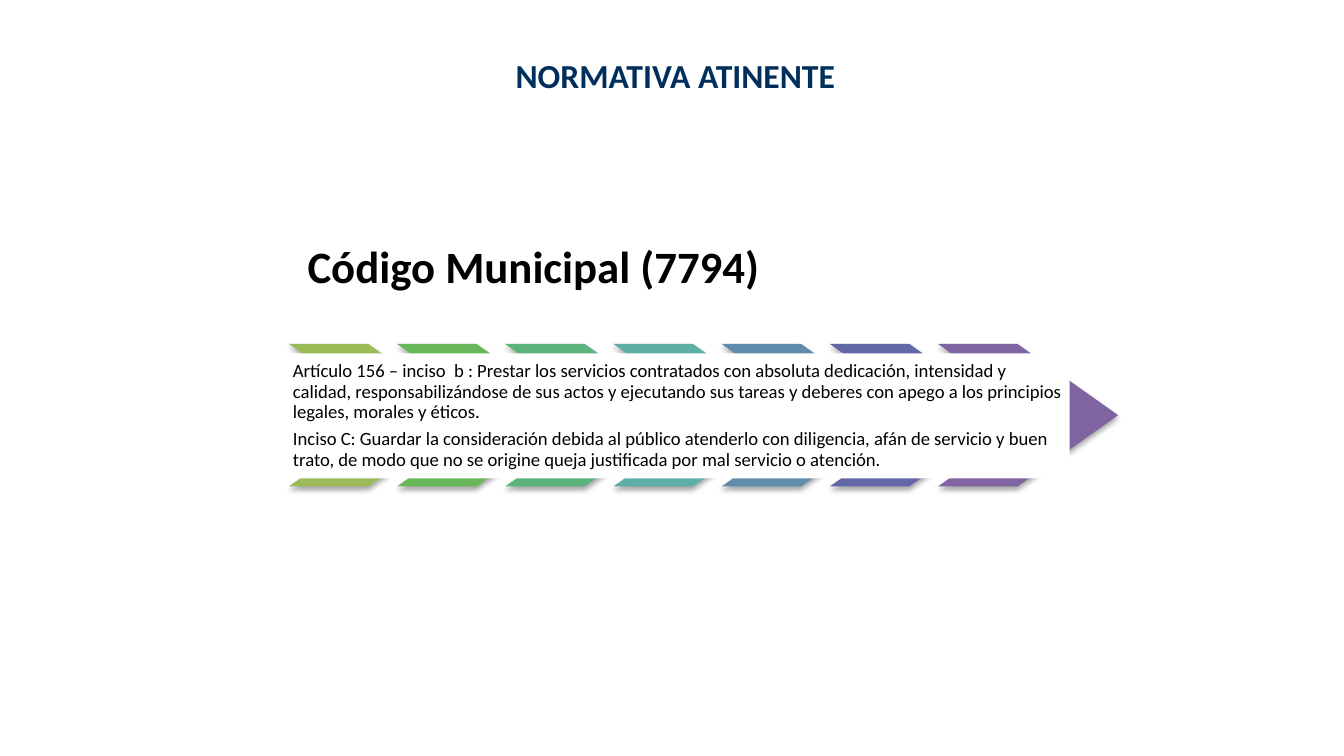
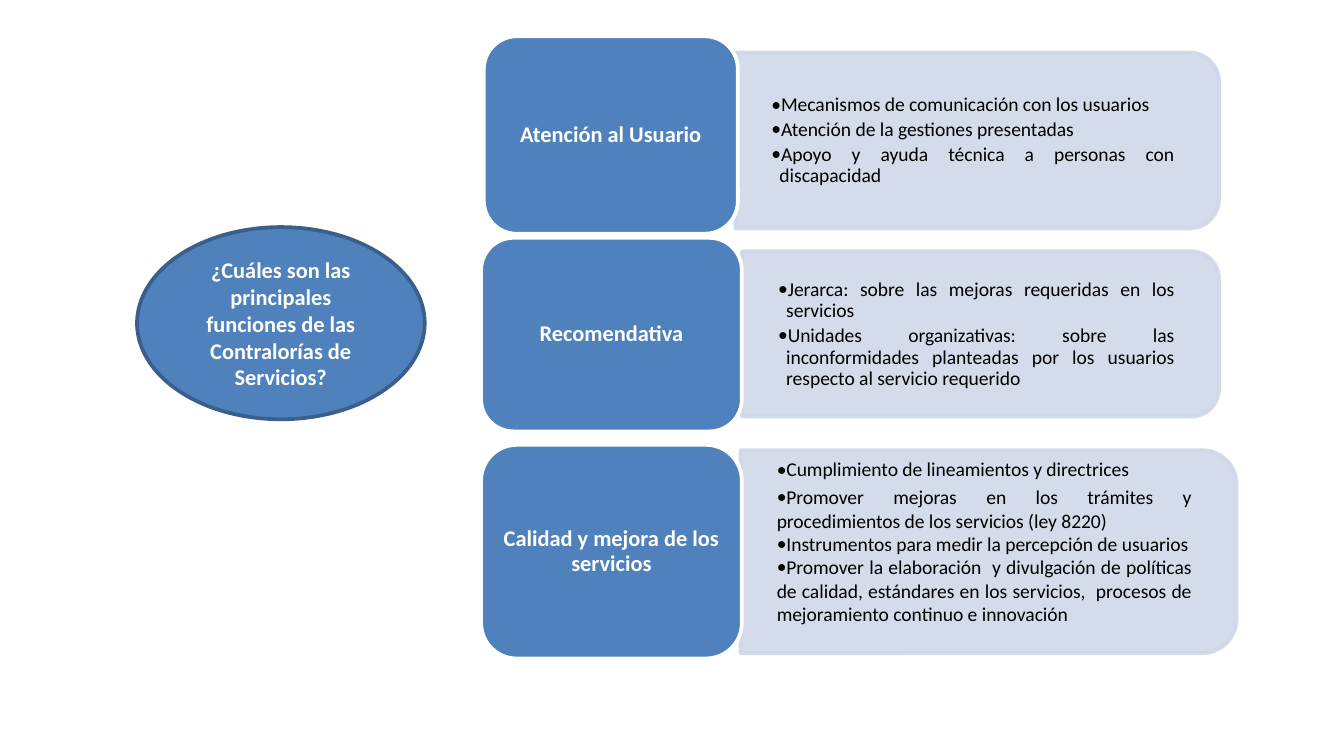
from dataclasses import dataclass

from lxml import etree
from pptx import Presentation
from pptx.dml.color import RGBColor
from pptx.enum.shapes import MSO_SHAPE
from pptx.enum.text import MSO_ANCHOR, PP_ALIGN
from pptx.oxml.ns import qn
from pptx.util import Inches, Pt

CHEVRON, RECT, OVAL = MSO_SHAPE.CHEVRON, MSO_SHAPE.RECTANGLE, MSO_SHAPE.OVAL
ROUNDED, ROUND_TOP = MSO_SHAPE.ROUNDED_RECTANGLE, MSO_SHAPE.ROUND_2_SAME_RECTANGLE
MIDDLE, BOTTOM = MSO_ANCHOR.MIDDLE, MSO_ANCHOR.BOTTOM
LEFT, CENTER, JUSTIFY = PP_ALIGN.LEFT, PP_ALIGN.CENTER, PP_ALIGN.JUSTIFY


@dataclass(frozen=True)
class Theme:
    font: str = "Calibri"
    navy: str = "002F5C"
    blue: str = "4F81BD"
    blue_edge: str = "3A5F8C"
    pale: str = "D0D8E8"
    white: str = "FFFFFF"
    black: str = "000000"
    chevrons: tuple = ("9BBB59", "69B75B", "5CB37C", "5EAFA6",
                       "608CAB", "6267A6", "8064A2")
    title: float = 18
    heading: float = 24
    label: float = 12
    bullet: float = 10.5
    body: float = 10


T = Theme()


def rgb(value):
    return RGBColor.from_string(value)


def set_alpha(element, percent):
    """Add transparency to the solid colour found under an XML element."""
    color = next(element.iter(qn("a:srgbClr")))
    etree.SubElement(color, qn("a:alpha"), val=str(percent * 1000))


def add_box(s, kind, box, fill, line=None):
    sp = s.shapes.add_shape(kind, *map(Inches, box))
    sp.shadow.inherit = False
    sp.fill.solid()
    sp.fill.fore_color.rgb = rgb(fill)
    if line:
        sp.line.color.rgb = rgb(line)
        sp.line.width = Pt(2)
    else:
        sp.line.fill.background()
    return sp


def add_textbox(s, box):
    return s.shapes.add_textbox(*map(Inches, box))


def frame(sp, anchor=MIDDLE, inset_x=0.1, inset_y=0.05):
    tf = sp.text_frame
    tf.word_wrap = True
    tf.vertical_anchor = anchor
    tf.margin_left = tf.margin_right = Inches(inset_x)
    tf.margin_top = tf.margin_bottom = Inches(inset_y)
    return tf


def write(tf, texts, size, color, align=LEFT, bold=False, spacing=0.9, after=0):
    for i, text in enumerate(texts):
        p = tf.paragraphs[0] if i == 0 else tf.add_paragraph()
        p.alignment = align
        p.line_spacing = spacing
        p.space_after = Pt(after)
        r = p.add_run()
        r.text = text
        r.font.name = T.font
        r.font.size = Pt(size)
        r.font.bold = bold
        r.font.color.rgb = rgb(color)


def add_bullet(p, hang):
    p.level = 1
    pPr = p._p.get_or_add_pPr()
    pPr.set("marL", str(Inches(hang)))
    pPr.set("indent", str(-Inches(hang)))
    etree.SubElement(pPr, qn("a:buFont"), typeface=T.font)
    etree.SubElement(pPr, qn("a:buChar"), char="•")


def add_soft_shadow(sp):
    effects = sp._element.spPr.find(qn("a:effectLst"))
    shadow = etree.SubElement(effects, qn("a:outerShdw"), blurRad=str(Pt(3.1)),
                              dist=str(Pt(1.8)), dir="5400000", rotWithShape="0")
    etree.SubElement(shadow, qn("a:srgbClr"), val=T.black)
    set_alpha(shadow, 35)


def add_title(s, box, text):
    write(frame(add_textbox(s, box)), [text], T.title, T.navy, CENTER, True, 1)


def add_law_block(s, box, heading, articles):
    """Heading above a row of chevrons, partly covered by the text of the law."""
    x, y, w, h = box
    heading_box = add_textbox(s, (x + 0.04, y, w - 0.07, 0.52))
    write(frame(heading_box, BOTTOM, 0.1, 0.1), [heading], T.heading, T.black, bold=True)
    chevron_h, pitch = 1.06, 0.805
    row_y = y + h - chevron_h
    for i, color in enumerate(T.chevrons):
        sp = add_box(s, CHEVRON, (x + i * pitch, row_y, 1.34, chevron_h), color)
        sp.adjustments[0] = 0.706
        add_soft_shadow(sp)
    cover = add_box(s, RECT, (x, row_y + 0.07, w, 0.93), T.white)
    write(frame(cover, MIDDLE, 0.03, 0.03), articles, T.body, T.black, after=4)


def add_question(s, box, text):
    sp = add_box(s, OVAL, box, T.blue, T.blue_edge)
    write(frame(sp), [text], T.label, T.white, CENTER, True, 1)


def add_panel(s, box):
    """Pale panel with rounded right corners: a shape turned by 90 degrees."""
    x, y, w, h = box
    sp = add_box(s, ROUND_TOP, (x + (w - h) / 2, y + (h - w) / 2, h, w), T.pale, T.pale)
    sp.rotation = 90
    for tag in ("a:solidFill", "a:ln"):
        set_alpha(sp._element.spPr.find(qn(tag)), 90)


def add_function_row(s, label_box, panel_box, label, points, hang=0.06, loose=False, lift=0):
    """Panel of points with its label; loose rows open up after the first point."""
    add_panel(s, panel_box)
    x, y, w, h = panel_box
    points_box = add_textbox(s, (x, y + 0.07 - lift, w - 0.06, h - 0.13))
    tf = frame(points_box, MIDDLE, 0.27, 0.14)
    write(tf, points, T.bullet, T.black, JUSTIFY, after=2)
    for i, p in enumerate(tf.paragraphs):
        add_bullet(p, hang)
        if loose and i:
            p.line_spacing, p.space_after = 1.0, Pt(0)
    sp = add_box(s, ROUNDED, label_box, T.blue, T.white)
    write(frame(sp, MIDDLE, 0.05, 0.03), [label], T.label, T.white, CENTER, True)


def build_law_slide(s):
    add_title(s, (1.63, 0.31, 6.79, 0.5), "NORMATIVA ATINENTE")
    add_law_block(s, (2.15, 1.76, 5.81, 1.86), "Código Municipal (7794)", [
        "Artículo 156 – inciso  b : Prestar los servicios contratados con absoluta "
        "dedicación, intensidad y calidad, responsabilizándose de sus actos y ejecutando "
        "sus tareas y deberes con apego a los principios legales, morales y éticos.",
        "Inciso C: Guardar la consideración debida al público atenderlo con diligencia, "
        "afán de servicio y buen trato, de modo que no se origine queja justificada por "
        "mal servicio o atención.",
    ])


def build_functions_slide(s):
    add_question(s, (1.02, 1.69, 2.14, 1.43),
                 "¿Cuáles son las principales funciones de las Contralorías de Servicios?")
    add_function_row(s, (3.6, 0.27, 1.89, 1.47), (5.47, 0.39, 3.6, 1.31),
                     "Atención al Usuario", [
        "Mecanismos de comunicación con los usuarios",
        "Atención de la gestiones presentadas",
        "Apoyo y ayuda técnica a personas con discapacidad",
    ])
    add_function_row(s, (3.58, 1.77, 1.94, 1.44), (5.52, 1.87, 3.55, 1.23),
                     "Recomendativa", [
        "Jerarca: sobre las mejoras requeridas en los servicios",
        "Unidades organizativas: sobre las inconformidades planteadas por los usuarios "
        "respecto al servicio requerido",
    ])
    add_function_row(s, (3.58, 3.31, 1.94, 1.59), (5.51, 3.35, 3.69, 1.51),
                     "Calidad y mejora de los servicios", [
        "Cumplimiento de lineamientos y directrices",
        "Promover mejoras en los trámites y procedimientos de los servicios (ley 8220)",
        "Instrumentos para medir la percepción de usuarios",
        "Promover la elaboración  y divulgación de políticas de calidad, estándares en "
        "los servicios,  procesos de mejoramiento continuo e innovación",
    ], hang=0, loose=True, lift=0.07)


def main():
    prs = Presentation()
    prs.slide_width = Inches(10)
    prs.slide_height = prs.slide_width * 9 // 16
    for build in (build_law_slide, build_functions_slide):
        build(prs.slides.add_slide(prs.slide_layouts[6]))
    prs.save("out.pptx")


if __name__ == "__main__":
    main()
